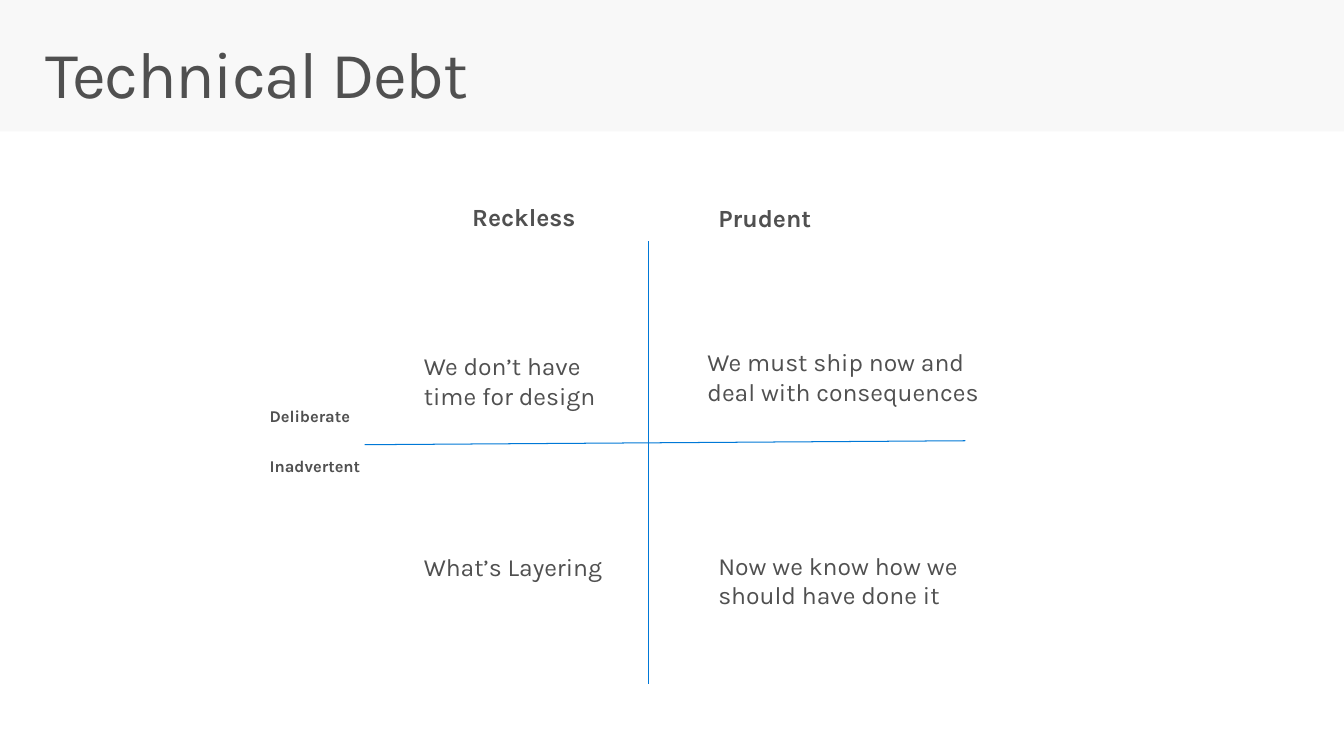
import pptx
import pptx.dml.color
import pptx.enum.shapes
import pptx.enum.text
import pptx.oxml.ns
import pptx.util
from lxml import etree

Pt = pptx.util.Pt
GREY = pptx.dml.color.RGBColor(0x50, 0x50, 0x50)
BLUE = pptx.dml.color.RGBColor(0x00, 0x78, 0xD7)
WHITE = pptx.dml.color.RGBColor(0xFF, 0xFF, 0xFF)
BAND = pptx.dml.color.RGBColor(0xF8, 0xF8, 0xF8)
FONT = "Karla"
WIDTH, HEIGHT, BAND_HEIGHT = 979.2, 550.8, 95.76

deck = pptx.Presentation()
deck.slide_width, deck.slide_height = Pt(WIDTH), Pt(HEIGHT)
page = deck.slides.add_slide(deck.slide_layouts[6])
page.background.fill.solid()
page.background.fill.fore_color.rgb = BAND


def add_text(text, left, top, width, height, size=18, bold=False, wrap=True,
             inset=7.2, inset_top=3.6, line_spacing=None, tracking=None):
    box = page.shapes.add_textbox(Pt(left), Pt(top), Pt(width), Pt(height))
    frame = box.text_frame
    frame.word_wrap = wrap
    frame.vertical_anchor = pptx.enum.text.MSO_ANCHOR.TOP
    frame.margin_left = frame.margin_right = Pt(inset)
    frame.margin_top = frame.margin_bottom = Pt(inset_top)
    for index, line in enumerate(text.split("\n")):
        para = frame.add_paragraph() if index else frame.paragraphs[0]
        if line_spacing:
            para.line_spacing = line_spacing
        span = para.add_run()
        span.text = line
        span.font.name = FONT
        span.font.size = Pt(size)
        span.font.bold = bold
        span.font.color.rgb = GREY
        if tracking:
            span.font._element.set("spc", str(tracking * 100))


body = page.shapes.add_shape(pptx.enum.shapes.MSO_SHAPE.RECTANGLE, 0, Pt(BAND_HEIGHT),
                             Pt(WIDTH), Pt(HEIGHT - BAND_HEIGHT))
body.shadow.inherit = False
body.fill.solid()
body.fill.fore_color.rgb = WHITE
body.line.fill.background()

add_text("Technical Debt", 21.6, 23.04, 936, 72, size=48, inset=11.52,
         inset_top=7.2, line_spacing=0.9, tracking=-1)

axes = [(472.32, 175.68, 472.32, 498.24), (703.44, 321.12, 265.68, 324)]
for ends in axes:
    axis = page.shapes.add_connector(pptx.enum.shapes.MSO_CONNECTOR.STRAIGHT,
                                     *[Pt(end) for end in ends])
    axis.line.color.rgb = BLUE
    axis.line.width = Pt(0.75)
    etree.SubElement(axis._element.spPr, pptx.oxml.ns.qn("a:effectLst"))

column_heads = [("Reckless", 336.96, 143.28), ("Prudent", 516.24, 144)]
for label, left, top in column_heads:
    add_text(label, left, top, 115.2, 29.52, bold=True)

row_heads = [("Deliberate", 292.32, 79.2), ("Inadvertent", 329.04, 87.12)]
for label, top, width in row_heads:
    add_text(label, 189.36, top, width, 22.32, size=12, bold=True, wrap=False)

quadrants = [
    ("We don’t have time for design", 301.68, 252, 150.48, 51.84, True),
    ("We must ship now and deal with consequences", 508.32, 249.12, 236.88, 51.84, True),
    ("What’s Layering", 301.68, 398.16, 156.24, 29.52, False),
    ("Now we know how we\nshould have done it", 516.24, 397.44, 220.32, 51.84, False),
]
for quote, left, top, width, height, wrap in quadrants:
    add_text(quote, left, top, width, height, wrap=wrap)

deck.save("out.pptx")
